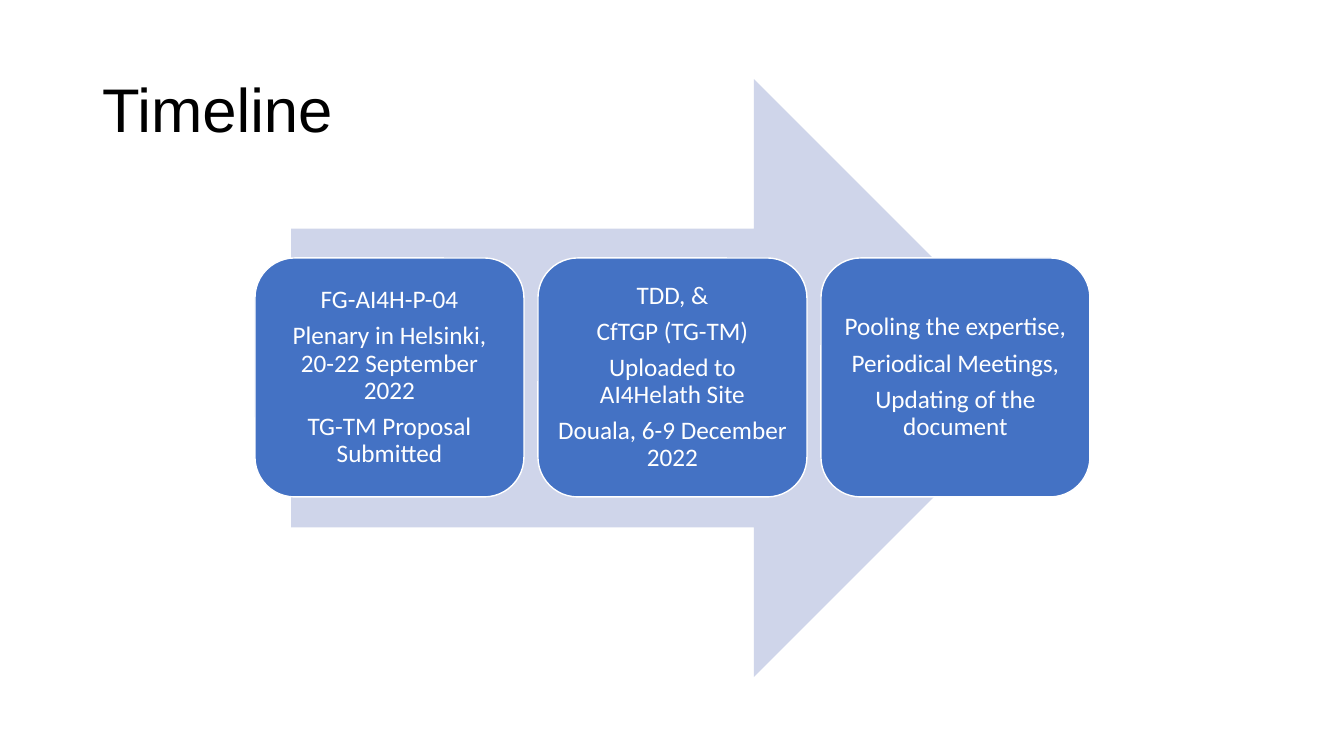
from pptx import Presentation
from pptx import util as u
from pptx.dml.color import RGBColor
from pptx.enum import shapes, text

EMU_PER_PX = 914400 / 100.8
SLIDE_SIZE = (1344, 756)
MILESTONES = [
    ["FG-AI4H-P-04", "Plenary in Helsinki, 20-22 September 2022",
     "TG-TM Proposal Submitted"],
    ["TDD, &", "CfTGP (TG-TM)", "Uploaded to AI4Helath Site",
     "Douala, 6-9 December 2022"],
    ["Pooling the expertise,", "Periodical Meetings,",
     "Updating of the document"],
]
FIRST_LEFT, MILESTONE_TOP, MILESTONE_WIDTH, MILESTONE_HEIGHT = 255, 258, 269, 239
GAP = 14


def px(length):
    return u.Emu(round(length * EMU_PER_PX))


def color(hex_string):
    return RGBColor.from_string(hex_string)


class TimelineSlide:
    ARROW, MILESTONE, WHITE, BLACK = "CFD5EA", "4472C4", "FFFFFF", "000000"
    TITLE_FONT, BODY_FONT = "Arial", "Calibri"

    def __init__(self, presentation):
        self.slide = presentation.slides.add_slide(presentation.slide_layouts[5])

    def set_lines(self, frame, lines, font, size, hex_string, align, after=0):
        frame.text = "\n".join(lines)
        frame.word_wrap = True
        frame.auto_size = text.MSO_AUTO_SIZE.NONE
        frame.vertical_anchor = text.MSO_ANCHOR.MIDDLE
        for paragraph in frame.paragraphs:
            paragraph.alignment = align
            paragraph.line_spacing = 0.9
            paragraph.space_before = u.Pt(0)
            paragraph.space_after = u.Pt(after)
            for run in paragraph.runs:
                run.font.name = font
                run.font.size = u.Pt(size)
                run.font.color.rgb = color(hex_string)

    def title(self, wording, left, top, width, height):
        heading = self.slide.shapes.title
        heading.left, heading.top = px(left), px(top)
        heading.width, heading.height = px(width), px(height)
        self.set_lines(heading.text_frame, [wording], self.TITLE_FONT, 44,
                       self.BLACK, text.PP_ALIGN.LEFT)

    def block(self, preset, box, fill):
        """Add a filled preset shape without line or shadow."""
        block = self.slide.shapes.add_shape(preset, *map(px, box))
        block.shadow.inherit = False
        block.fill.solid()
        block.fill.fore_color.rgb = color(fill)
        block.line.fill.background()
        return block

    def arrow(self, *box):
        self.block(shapes.MSO_SHAPE.RIGHT_ARROW, box, self.ARROW)

    def milestone(self, lines, *box):
        card = self.block(shapes.MSO_SHAPE.ROUNDED_RECTANGLE, box, self.MILESTONE)
        card.line.color.rgb = color(self.WHITE)
        card.line.width = u.Pt(1)
        frame = card.text_frame
        frame.margin_left = frame.margin_right = px(7)
        frame.margin_top = frame.margin_bottom = px(7)
        self.set_lines(frame, lines, self.BODY_FONT, 18, self.WHITE,
                       text.PP_ALIGN.CENTER, after=6.3)


def main():
    presentation = Presentation()
    presentation.slide_width, presentation.slide_height = map(px, SLIDE_SIZE)
    timeline = TimelineSlide(presentation)
    timeline.title("Timeline", 92, 40, 1159, 146)
    timeline.arrow(291, 79, 762, 598)
    for index, lines in enumerate(MILESTONES):
        left = FIRST_LEFT + index * (MILESTONE_WIDTH + GAP)
        timeline.milestone(lines, left, MILESTONE_TOP,
                           MILESTONE_WIDTH, MILESTONE_HEIGHT)
    presentation.save("out.pptx")


if __name__ == "__main__":
    main()
